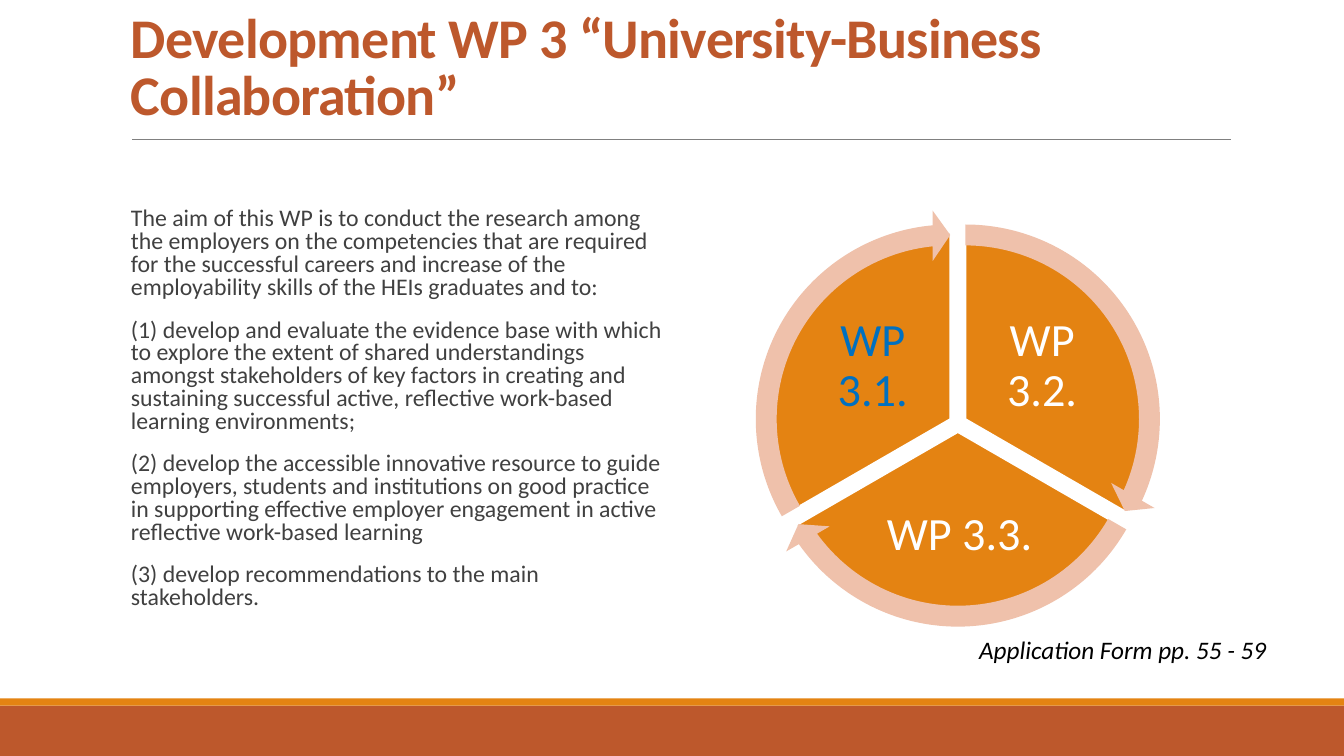
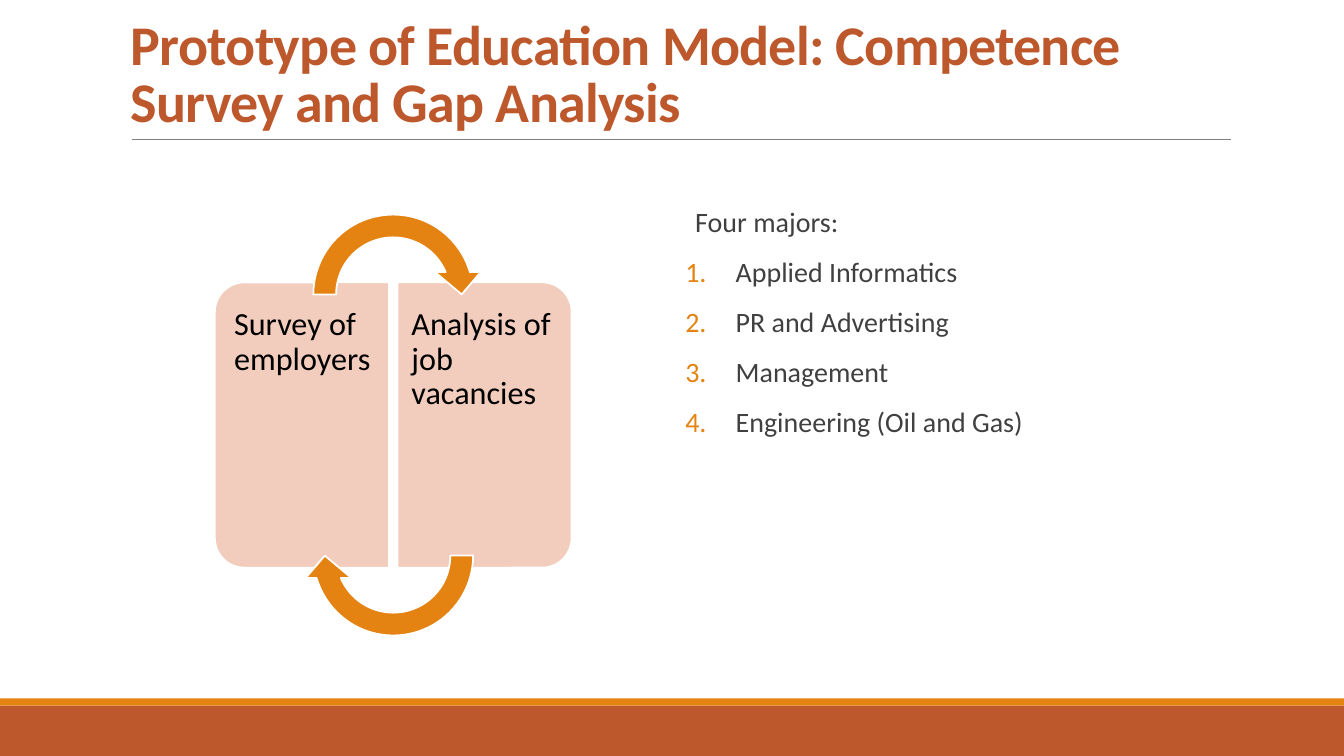
from math import cos, radians, sin

from lxml.etree import SubElement
from pptx import Presentation
from pptx.dml.color import RGBColor
from pptx.enum.shapes import MSO_CONNECTOR, MSO_SHAPE as Preset
from pptx.enum.text import MSO_ANCHOR as Anchor, PP_ALIGN as Align
from pptx.oxml.ns import qn
from pptx.util import Cm, Pt

FONT = "Calibri"
RUST, ORANGE, WHITE, BLACK = "BD582C", "E48312", "FFFFFF", "000000"
GREY, RULE_GREY, BLUE = "404040", "808080", "0070C0"
PALE_ARROW, PALE_PANEL = "EFC1AB", "F2CDBD"
SLIDE_WIDTH, SLIDE_HEIGHT = 33.87, 19.05
INSET = (0.25, 0.13, 0.25, 0.13)
BODY_TOP, BODY_WIDTH, BODY_HEIGHT = 5.13, 13.72, 11.18

AIMS = [
    "The aim of this WP is to conduct the research among the employers on the "
    "competencies that are required for the successful careers and increase of "
    "the employability skills of the HEIs graduates and to:",
    "(1) develop and evaluate the evidence base with which to explore the extent "
    "of shared understandings amongst stakeholders of key factors in creating and "
    "sustaining successful active, reflective work-based learning environments;",
    "(2) develop the accessible innovative resource to guide employers, students "
    "and institutions on good practice in supporting effective employer "
    "engagement in active reflective work-based learning",
    "(3) develop recommendations to the main stakeholders.",
]
MAJORS = ["Applied Informatics", "PR and Advertising", "Management",
          "Engineering (Oil and Gas)"]


def color(hex_code):
    """Turn a hex string into a colour."""
    return RGBColor.from_string(hex_code)


def angle(degrees):
    """Turn degrees into the unit of an angular shape adjustment."""
    return degrees % 360 * 0.6


def add_preset(slide, preset, center, size, fill, outline=None, adjust=(), rotation=0):
    """Draw a preset shape around a center point."""
    (x, y), (width, height) = center, size
    shape = slide.shapes.add_shape(preset, Cm(x - width / 2), Cm(y - height / 2),
                                   Cm(width), Cm(height))
    shape.shadow.inherit = False
    shape.rotation = rotation
    shape.fill.solid()
    shape.fill.fore_color.rgb = color(fill)
    if outline:
        shape.line.color.rgb = color(outline)
        shape.line.width = Pt(1.25)
    else:
        shape.line.fill.background()
    for index, value in enumerate(adjust):
        shape.adjustments[index] = value


def add_text(slide, box, texts, size, hex_code, spacing=1.0, align=Align.LEFT,
             anchor=Anchor.TOP, inset=INSET, bold=None, italic=None):
    """Write paragraphs in a wrapping text box and return its frame."""
    frame = slide.shapes.add_textbox(*map(Cm, box)).text_frame
    frame.word_wrap = True
    frame.vertical_anchor = anchor
    (frame.margin_left, frame.margin_top,
     frame.margin_right, frame.margin_bottom) = map(Cm, inset)
    frame.text = "\n".join(texts)
    for paragraph in frame.paragraphs:
        paragraph.alignment = align
        paragraph.line_spacing = spacing
        for run in paragraph.runs:
            run.font.name, run.font.size = FONT, Pt(size)
            run.font.bold, run.font.italic = bold, italic
            run.font.color.rgb = color(hex_code)
    return frame


def indent(paragraph, left, hanging=0):
    """Set the left margin and the hanging indent of a paragraph."""
    properties = paragraph._p.get_or_add_pPr()
    properties.set("marL", str(Cm(left)))
    properties.set("indent", str(-Cm(hanging)))
    return properties


def number(paragraph):
    """Give a paragraph an orange automatic number."""
    properties = indent(paragraph, 1.27, 1.27)
    tint = SubElement(properties, qn("a:buClr"))
    SubElement(tint, qn("a:srgbClr"), val=ORANGE)
    SubElement(properties, qn("a:buAutoNum"), type="arabicPeriod")


def add_body(slide, left, texts, size, spacing):
    """Write the body column and return its paragraphs."""
    frame = add_text(slide, (left, BODY_TOP, BODY_WIDTH, BODY_HEIGHT), texts, size,
                     GREY, spacing, inset=(0, 0.13, 0, 0.13))
    for position, paragraph in enumerate(frame.paragraphs):
        paragraph.space_before = Pt(12 if position else 0)
        paragraph.space_after = Pt(2)
        indent(paragraph, 0.25)
    return frame.paragraphs


def add_base(deck, title, title_height):
    """Add a slide with the footer bands, the title and its rule."""
    slide = deck.slides.add_slide(deck.slide_layouts[6])
    for top, height, fill in ((17.78, 1.27, RUST), (17.6, 0.18, ORANGE)):
        add_preset(slide, Preset.RECTANGLE, (SLIDE_WIDTH / 2, top + height / 2),
                   (SLIDE_WIDTH, height), fill)
    rule = slide.shapes.add_connector(MSO_CONNECTOR.STRAIGHT, Cm(3.33), Cm(3.52),
                                      Cm(31.01), Cm(3.52))
    rule.line.color.rgb = color(RULE_GREY)
    rule.line.width = Pt(0.5)
    SubElement(rule._element.spPr, qn("a:effectLst"))
    heading = add_text(slide, (3.05, 0.79, 27.94, title_height), [title], 40, RUST,
                       0.85, anchor=Anchor.BOTTOM, bold=True)
    heading.paragraphs[0].runs[0]._r.get_or_add_rPr().set("spc", "-50")
    return slide


def add_turn(slide, center, diameter, start, end, head, thickness, fill,
             outline=None, rotation=0):
    """Draw a circular arrow whose tip reaches the end angle."""
    adjust = (thickness[0], angle(head), angle(end - head), angle(start), thickness[1])
    add_preset(slide, Preset.CIRCULAR_ARROW, center, (diameter, diameter), fill,
               outline, adjust, rotation)


def add_wheel(slide, hub, wedges):
    """Draw equal wedges pushed out from the hub, with arrows around them."""
    sweep = 360 / len(wedges)
    placed = []
    for index, (label, hex_code, box) in enumerate(wedges):
        start = -90 + index * sweep
        middle = radians(start + sweep / 2)
        center = (hub[0] + 0.22 * cos(middle), hub[1] + 0.22 * sin(middle))
        placed.append((center, start))
        add_preset(slide, Preset.PIE, center, (9.4, 9.4), ORANGE, WHITE,
                   (angle(start), angle(start + sweep)))
        add_text(slide, box, [label], 33, hex_code, 0.9, Align.CENTER, Anchor.MIDDLE,
                 (0.13, 0.13, 0.13, 0.13))
    for center, start in placed:
        add_turn(slide, center, 10.54, start, start + sweep, 5.46, (0.05, 0.06),
                 PALE_ARROW)


def add_exchange(slide, center, panels):
    """Draw two facing panels joined by arrows above and below."""
    x, y = center
    for side, label, inset in zip((-1, 1), panels,
                                  ((0.25, 0.41, 0.36, 0.41), (0.36, 0.41, 0.25, 0.41))):
        add_preset(slide, Preset.ROUND_2_SAME_RECTANGLE, (x + side * 2.3, y),
                   (7.19, 4.39), PALE_PANEL, WHITE, (0.17, 0), side * 90 % 360)
        add_text(slide, (x + side * 2.18 - 2.08, 7.34, 4.17, 6.76), [label], 23,
                 BLACK, 0.9, inset=inset)
    for side, rotation in ((-1, 0), (1, 180)):
        add_turn(slide, (x, y + side * 3.29), 4.6, 180, 360, 19.04, (0.125, 0.125),
                 ORANGE, WHITE, rotation)


def add_collaboration(deck):
    """Build the slide on university and business collaboration."""
    slide = add_base(deck, "Development WP 3 “University-Business Collaboration”", 2.54)
    add_body(slide, 3.05, AIMS, 17, 0.8)
    add_wheel(slide, (24.14, 10.67), [
        ("WP 3.2.", WHITE, (24.59, 7.85, 3.35, 2.79)),
        ("WP 3.3.", WHITE, (21.67, 12.27, 5.03, 2.46)),
        ("WP 3.1.", BLUE, (20.32, 7.85, 3.35, 2.79)),
    ])
    add_text(slide, (20.45, 15.85, 11.72, 1.02), ["Application Form pp. 55 - 59"], 18,
             BLACK, align=Align.RIGHT, italic=True)


def add_survey(deck):
    """Build the slide on the competence survey and gap analysis."""
    slide = add_base(
        deck, "Prototype of Education Model: Competence Survey and Gap Analysis", 2.72)
    add_exchange(slide, (9.91, 10.71),
                 ["Survey of employers", "Analysis of job vacancies"])
    for major in add_body(slide, 17.27, ["Four majors:", *MAJORS], 20, 0.9)[1:]:
        number(major)


def main():
    """Build and save the presentation."""
    deck = Presentation()
    deck.slide_width, deck.slide_height = Cm(SLIDE_WIDTH), Cm(SLIDE_HEIGHT)
    add_collaboration(deck)
    add_survey(deck)
    deck.save("out.pptx")


if __name__ == "__main__":
    main()
